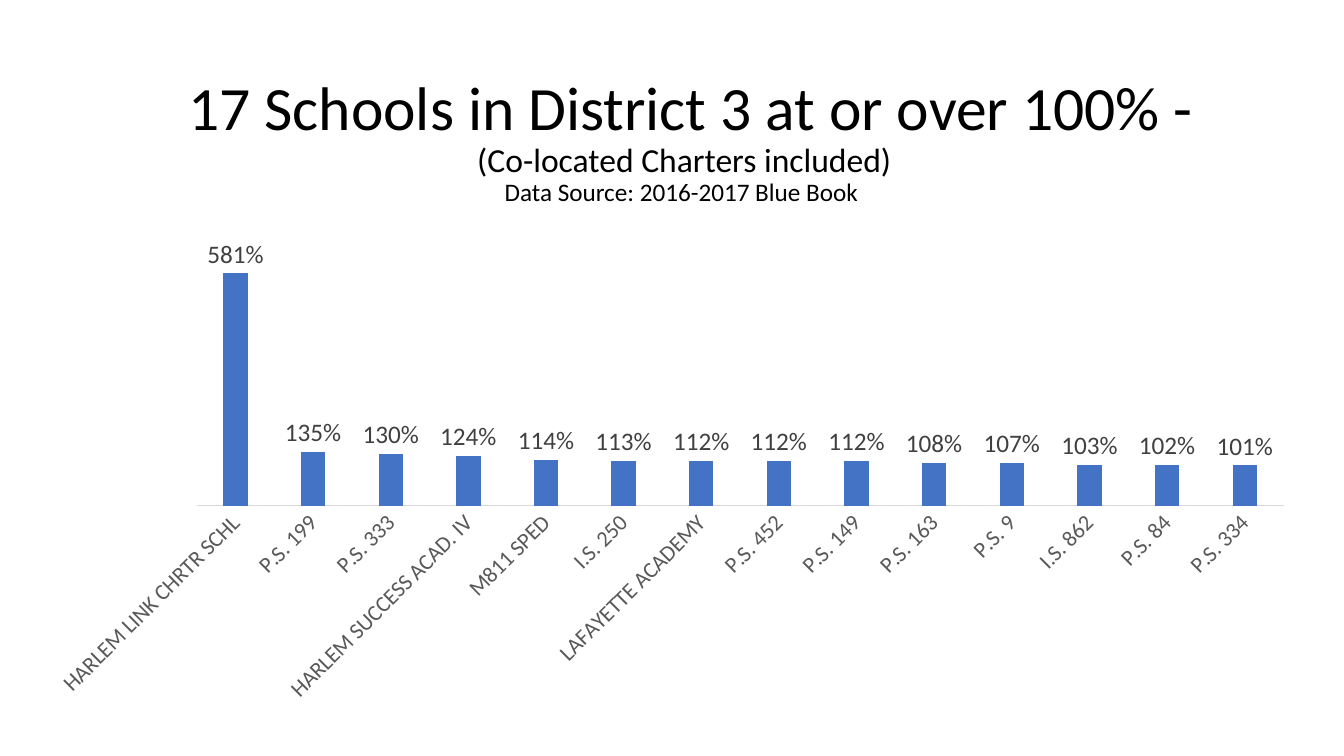
from pptx import Presentation
from pptx import util as u
from pptx.chart import data as chart_data
from pptx.dml.color import RGBColor
from pptx.enum import chart as ch, text as tx

FONT = "Calibri"
BLACK = RGBColor(0x00, 0x00, 0x00)
BAR_BLUE = RGBColor(0x44, 0x72, 0xC4)
LABEL_GREY = RGBColor(0x40, 0x40, 0x40)
AXIS_GREY = RGBColor(0x59, 0x59, 0x59)
RULE_GREY = RGBColor(0xD9, 0xD9, 0xD9)

HEADING = (
    (" 17 Schools in District 3 at or over 100% -", 44),
    ("(Co-located Charters included)", 24),
    ("Data Source: 2016-2017 Blue Book ", 18),
)
UTILIZATION = {
    "HARLEM LINK CHRTR SCHL": 581,
    "P.S. 199": 135,
    "P.S. 333": 130,
    "HARLEM SUCCESS ACAD. IV": 124,
    "M811 SPED": 114,
    "I.S. 250": 113,
    "LAFAYETTE ACADEMY": 112,
    "P.S. 452": 112,
    "P.S. 149": 112,
    "P.S. 163": 108,
    "P.S. 9": 107,
    "I.S. 862": 103,
    "P.S. 84": 102,
    "P.S. 334": 101,
}


def style_font(font, size, color):
    font.name = FONT
    font.size = u.Pt(size)
    font.color.rgb = color


def add_heading(slide, left, top, width, height):
    heading = slide.shapes.add_textbox(left, top, width, height).text_frame
    heading.word_wrap = True
    heading.vertical_anchor = tx.MSO_ANCHOR.MIDDLE
    lines = heading.paragraphs[0]
    lines.text = "\v".join(line for line, _ in HEADING)
    lines.alignment = tx.PP_ALIGN.CENTER
    lines.line_spacing = 0.9
    for run, (_, size) in zip(lines.runs, HEADING):
        style_font(run.font, size, BLACK)


def add_utilization_chart(slide, left, top, width, height):
    figures = chart_data.CategoryChartData(number_format='0"%"')
    figures.categories = list(UTILIZATION)
    figures.add_series("Series 1", list(UTILIZATION.values()))
    chart = slide.shapes.add_chart(
        ch.XL_CHART_TYPE.COLUMN_CLUSTERED, left, top, width, height, figures
    ).chart
    chart.has_legend = False
    chart.has_title = False
    style_font(chart.font, 10, BLACK)

    percent_axis = chart.value_axis
    percent_axis.visible = False
    percent_axis.has_major_gridlines = False
    percent_axis.minimum_scale = 0
    percent_axis.maximum_scale = 700

    school_axis = chart.category_axis
    school_axis.major_tick_mark = ch.XL_TICK_MARK.NONE
    school_axis.format.line.color.rgb = RULE_GREY
    school_axis.format.line.width = u.Pt(0.75)
    style_font(school_axis.tick_labels.font, 16, AXIS_GREY)
    for body in chart.element.xpath(".//c:catAx/c:txPr/a:bodyPr"):
        body.set("rot", "-2700000")

    bars = chart.plots[0]
    bars.vary_by_categories = False
    bars.gap_width = 219
    bars.overlap = -27
    bars.series[0].format.fill.solid()
    bars.series[0].format.fill.fore_color.rgb = BAR_BLUE

    percentages = bars.series[0].data_labels
    percentages.show_value = True
    percentages.position = ch.XL_LABEL_POSITION.OUTSIDE_END
    percentages.number_format = '0"%"'
    percentages.number_format_is_linked = False
    style_font(percentages.font, 18, LABEL_GREY)


def main():
    deck = Presentation()
    deck.slide_width = u.Cm(33.87)
    deck.slide_height = u.Cm(19.05)
    slide = deck.slides.add_slide(deck.slide_layouts[6])
    add_heading(slide, u.Cm(2.64), u.Cm(1.75), u.Cm(29.21), u.Cm(3.68))
    add_utilization_chart(slide, u.Cm(0.81), u.Cm(5.44), u.Cm(32.18), u.Cm(12.52))
    deck.save("out.pptx")


if __name__ == "__main__":
    main()
